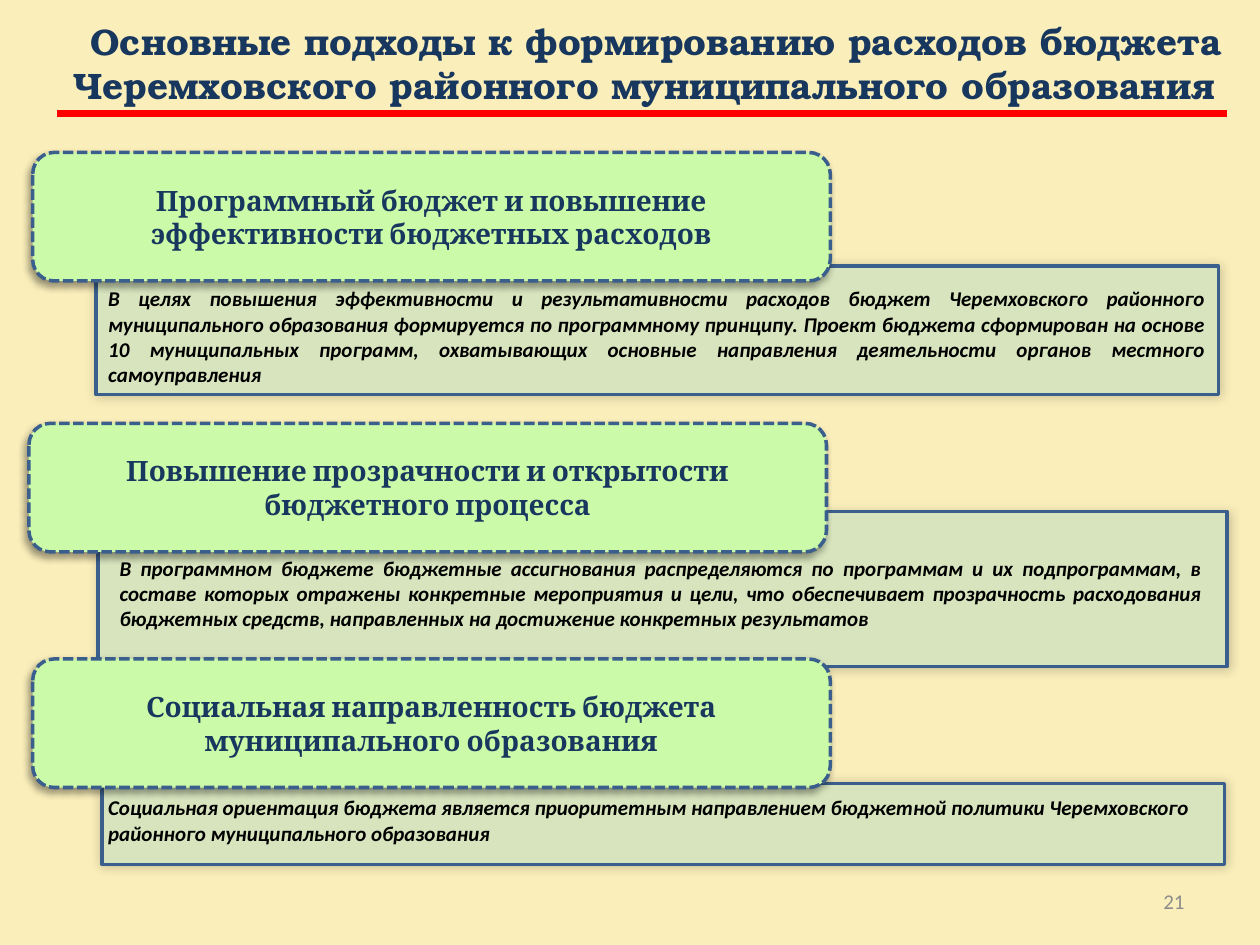
from lxml import etree
from pptx import Presentation
from pptx.dml.color import RGBColor
from pptx.enum.dml import MSO_LINE
from pptx.enum.shapes import MSO_CONNECTOR, MSO_SHAPE
from pptx.enum.text import MSO_ANCHOR, MSO_AUTO_SIZE, PP_ALIGN
from pptx.oxml.ns import qn
from pptx.util import Inches, Pt

PROCESS = MSO_SHAPE.FLOWCHART_PROCESS
ROUNDED = MSO_SHAPE.FLOWCHART_ALTERNATE_PROCESS
DASH = MSO_LINE.SQUARE_DOT
TOP, MIDDLE = MSO_ANCHOR.TOP, MSO_ANCHOR.MIDDLE
LEFT, CENTER, RIGHT, JUSTIFY = PP_ALIGN.LEFT, PP_ALIGN.CENTER, PP_ALIGN.RIGHT, PP_ALIGN.JUSTIFY

NAVY, BLUE, GREEN, SAGE = "17375E", "3A5F8C", "CBFAA8", "D7E4BD"
HEADING_SIZE = (6.33, 1.02)
TITLE = "Основные подходы к формированию расходов бюджета Черемховского районного муниципального образования"
SECTIONS = [
    {
        "heading": "Программный бюджет и повышение эффективности бюджетных расходов",
        "heading_at": (0.26, 1.21),
        "panel": (0.76, 2.11, 8.91, 1.02),
        "body": "В целях повышения эффективности и результативности расходов бюджет Черемховского районного муниципального образования формируется по программному принципу. Проект бюджета сформирован на основе 10 муниципальных программ, охватывающих основные направления деятельности органов местного самоуправления",
        "body_box": (0.76, 2.22, 8.91, 0.91),
        "align": JUSTIFY,
    },
    {
        "heading": "Повышение прозрачности и открытости\nбюджетного процесса",
        "heading_at": (0.23, 3.36),
        "panel": (0.78, 4.06, 8.96, 1.23),
        "body": "В программном бюджете бюджетные ассигнования распределяются по программам и их подпрограммам, в составе которых отражены конкретные мероприятия и цели, что обеспечивает прозрачность расходования бюджетных средств, направленных на достижение конкретных результатов",
        "body_box": (0.85, 4.36, 8.79, 0.7),
        "align": JUSTIFY,
    },
    {
        "heading": "Социальная направленность бюджета\nмуниципального образования",
        "heading_at": (0.26, 5.23),
        "panel": (0.81, 6.22, 8.91, 0.64),
        "body": "Социальная ориентация бюджета является приоритетным направлением бюджетной политики Черемховского районного муниципального образования",
        "body_box": (0.76, 6.26, 8.91, 0.5),
        "align": LEFT,
    },
]


def rgb(color):
    return RGBColor.from_string(color)


def inches(box):
    return [Inches(v) for v in box]


def write(shape, text, font, size, color, align, anchor=TOP, bold=False, italic=False):
    tf = shape.text_frame
    tf.text = text
    tf.word_wrap = True
    tf.auto_size = MSO_AUTO_SIZE.NONE
    tf.vertical_anchor = anchor
    for p in tf.paragraphs:
        p.alignment = align
        for r in p.runs:
            r.font.name, r.font.size = font, Pt(size)
            r.font.bold, r.font.italic = bold, italic
            r.font.color.rgb = rgb(color)


def add_shadow(shape, alpha, blur, dist, angle):
    shape.shadow.inherit = False
    effects = shape._element.spPr.find(qn("a:effectLst"))
    shadow = etree.SubElement(effects, qn("a:outerShdw"), blurRad=str(Pt(blur)),
                              dist=str(Pt(dist)), dir=str(angle * 60000), rotWithShape="0")
    color = etree.SubElement(shadow, qn("a:srgbClr"), val="000000")
    etree.SubElement(color, qn("a:alpha"), val=str(alpha * 1000))


def add_box(s, kind, box, fill, shadow):
    sp = s.shapes.add_shape(kind, *inches(box))
    sp.fill.solid()
    sp.fill.fore_color.rgb = rgb(fill)
    sp.line.color.rgb = rgb(BLUE)
    sp.line.width = Pt(2)
    add_shadow(sp, *shadow)
    return sp


def add_section(s, section):
    add_box(s, PROCESS, section["panel"], SAGE, (20, 6, 0, 225))
    body = s.shapes.add_textbox(*inches(section["body_box"]))
    write(body, section["body"], "Calibri", 12, "000000", section["align"], bold=True, italic=True)
    heading = add_box(s, ROUNDED, section["heading_at"] + HEADING_SIZE, GREEN, (40, 4, 3, 135))
    heading.line.dash_style = DASH
    write(heading, section["heading"], "Cambria", 16, NAVY, CENTER, MIDDLE, bold=True)


def main():
    prs = Presentation()
    prs.slide_width, prs.slide_height = Inches(10), Inches(7.5)
    s = prs.slides.add_slide(prs.slide_layouts[5])
    s.background.fill.solid()
    s.background.fill.fore_color.rgb = rgb("FAEEBA")

    title = s.shapes.title
    title.left, title.top, title.width, title.height = inches((0.23, 0.1, 9.77, 0.8))
    write(title, TITLE, "TeX Gyre Bonum", 21, NAVY, CENTER, MIDDLE, bold=True)
    title.text_frame.paragraphs[0]._p.get_or_add_pPr().set("indent", str(Inches(0.19)))

    rule = s.shapes.add_connector(MSO_CONNECTOR.STRAIGHT, *inches((0.45, 0.9, 9.74, 0.9)))
    rule.line.color.rgb = rgb("FF0000")
    rule.line.width = Pt(3.75)
    etree.SubElement(rule._element.spPr, qn("a:effectLst"))

    for section in SECTIONS:
        add_section(s, section)

    number = s.shapes.add_textbox(*inches((7.17, 6.95, 2.33, 0.4)))
    write(number, "21", "Calibri", 12, "8C8C8C", RIGHT, MIDDLE)
    prs.save("out.pptx")


if __name__ == "__main__":
    main()
